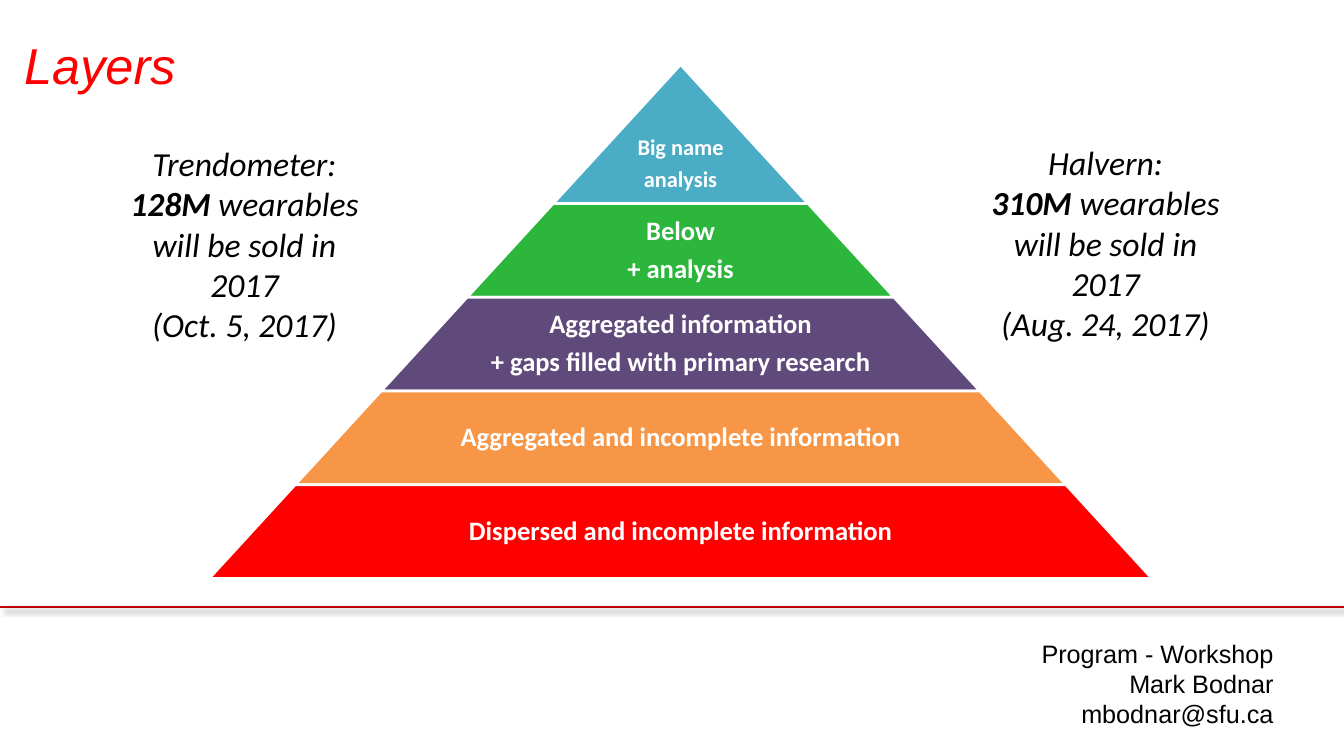
import pptx
import pptx.util
from lxml import etree
from pptx.dml.color import RGBColor
from pptx.enum.shapes import MSO_CONNECTOR, MSO_SHAPE
from pptx.enum.text import MSO_ANCHOR, PP_ALIGN
from pptx.oxml.ns import qn
from pptx.util import Inches, Pt

TITLE = "Layers"
CONTACT = ["Program - Workshop", "Mark Bodnar", "mbodnar@sfu.ca"]

# Each forecast: left, top, paragraphs, where a paragraph is a list of (text, bold)
FORECASTS = [
    (1.1, 1.37, [[("Trendometer:", False)],
                 [("128M ", True), ("wearables will be sold in 2017", False)],
                 [("(Oct. 5, 2017)", False)]]),
    (9.64, 1.36, [[("Halvern:", False)],
                  [("310M ", True), ("wearables will be sold in 2017", False)],
                  [("(Aug. 24, 2017)", False)]]),
]

# Each layer from the tip down: lines, fill, height, text size
LAYERS = [
    (["Big name", "analysis"], "4BACC6", 1.38, 16),
    (["Below", "+ analysis"], "2CB73C", 0.93, 19),
    (["Aggregated information", "+ gaps filled with primary research"], "604A7B", 0.93, 19),
    (["Aggregated and incomplete information"], "F79646", 0.93, 19),
    (["Dispersed and incomplete information"], "FF0000", 0.93, 19),
]

THEME = {
    "heading_font": "Arial", "body_font": "Calibri",
    "title": "FF0000", "text": "000000", "light": "FFFFFF", "rule": "C00000",
    "title_size": 36, "forecast_size": 24, "contact_size": 18,
}

PYRAMID_CENTER, PYRAMID_TOP, SLOPE = 6.75, 0.64, 0.917
TIP_TEXT_HEIGHT = 0.78
RULE_TOP = 6.02


def color(name):
    return RGBColor.from_string(THEME.get(name, name))


def add_text(page, place, paragraphs, font, size, ink, align,
             italic=False, bold=False, margins=(0.1, 0.05)):
    """Add a text box; a paragraph is a string or a list of (text, bold)."""
    box = page.shapes.add_textbox(*(Inches(length) for length in place))
    frame = box.text_frame
    frame.word_wrap = True
    frame.margin_left = frame.margin_right = Inches(margins[0])
    frame.margin_top = frame.margin_bottom = Inches(margins[1])
    for index, content in enumerate(paragraphs):
        para = frame.paragraphs[0] if index == 0 else frame.add_paragraph()
        para.alignment = align
        spans = [(content, bold)] if isinstance(content, str) else content
        for text, heavy in spans:
            span = para.add_run()
            span.text = text
            span.font.name = font
            span.font.size = Pt(size)
            span.font.color.rgb = color(ink)
            span.font.italic = italic
            span.font.bold = heavy
    return frame


def add_rule(page, width):
    rule = page.shapes.add_connector(MSO_CONNECTOR.STRAIGHT, width, Inches(RULE_TOP),
                                     0, Inches(RULE_TOP))
    rule.line.color.rgb = color("rule")
    rule.line.width = Pt(1.5)
    properties = rule._element.spPr
    effects = etree.SubElement(properties, qn("a:effectLst"))
    shadow = etree.SubElement(effects, qn("a:outerShdw"), blurRad=str(Pt(4)),
                              dist=str(Pt(3)), dir="2700000", algn="tl", rotWithShape="0")
    tint = etree.SubElement(shadow, qn("a:srgbClr"), val=THEME["text"])
    etree.SubElement(tint, qn("a:alpha"), val="40000")


def add_pyramid(page):
    depth = 0
    for index, (lines, fill, height, size) in enumerate(LAYERS):
        top = PYRAMID_TOP + depth
        depth += height
        width = 2 * SLOPE * depth
        layer = page.shapes.add_shape(
            MSO_SHAPE.TRAPEZOID, Inches(PYRAMID_CENTER - width / 2), Inches(top),
            Inches(width), Inches(height))
        layer.adjustments[0] = SLOPE
        layer.shadow.inherit = False
        layer.fill.solid()
        layer.fill.fore_color.rgb = color(fill)
        layer.line.color.rgb = color("light")
        layer.line.width = Pt(2)

        text_width = width if index == 0 else width * 0.65
        text_height = TIP_TEXT_HEIGHT if index == 0 else height
        place = (PYRAMID_CENTER - text_width / 2, top + height - text_height,
                 text_width, text_height)
        frame = add_text(page, place, lines, THEME["body_font"], size, "light",
                         PP_ALIGN.CENTER, bold=True, margins=(0.03, 0.03))
        frame.vertical_anchor = MSO_ANCHOR.MIDDLE
        for para in frame.paragraphs:
            para.line_spacing = 0.9
            para.space_after = Pt(size * 0.35)


def main():
    deck = pptx.Presentation()
    deck.slide_width, deck.slide_height = Inches(13.33), Inches(7.5)
    page = deck.slides.add_slide(deck.slide_layouts[6])

    add_rule(page, deck.slide_width)
    add_text(page, (7.26, 6.28, 5.47, 1.01), CONTACT, THEME["heading_font"],
             THEME["contact_size"], "text", PP_ALIGN.RIGHT)
    add_text(page, (0, 0.29, 11.68, 0.71), [TITLE], THEME["heading_font"],
             THEME["title_size"], "title", PP_ALIGN.LEFT, italic=True, margins=(0.24, 0.05))
    add_pyramid(page)
    for left, top, paragraphs in FORECASTS:
        add_text(page, (left, top, 2.65, 2.12), paragraphs, THEME["body_font"],
                 THEME["forecast_size"], "text", PP_ALIGN.CENTER, italic=True)

    deck.save("out.pptx")


if __name__ == "__main__":
    main()
